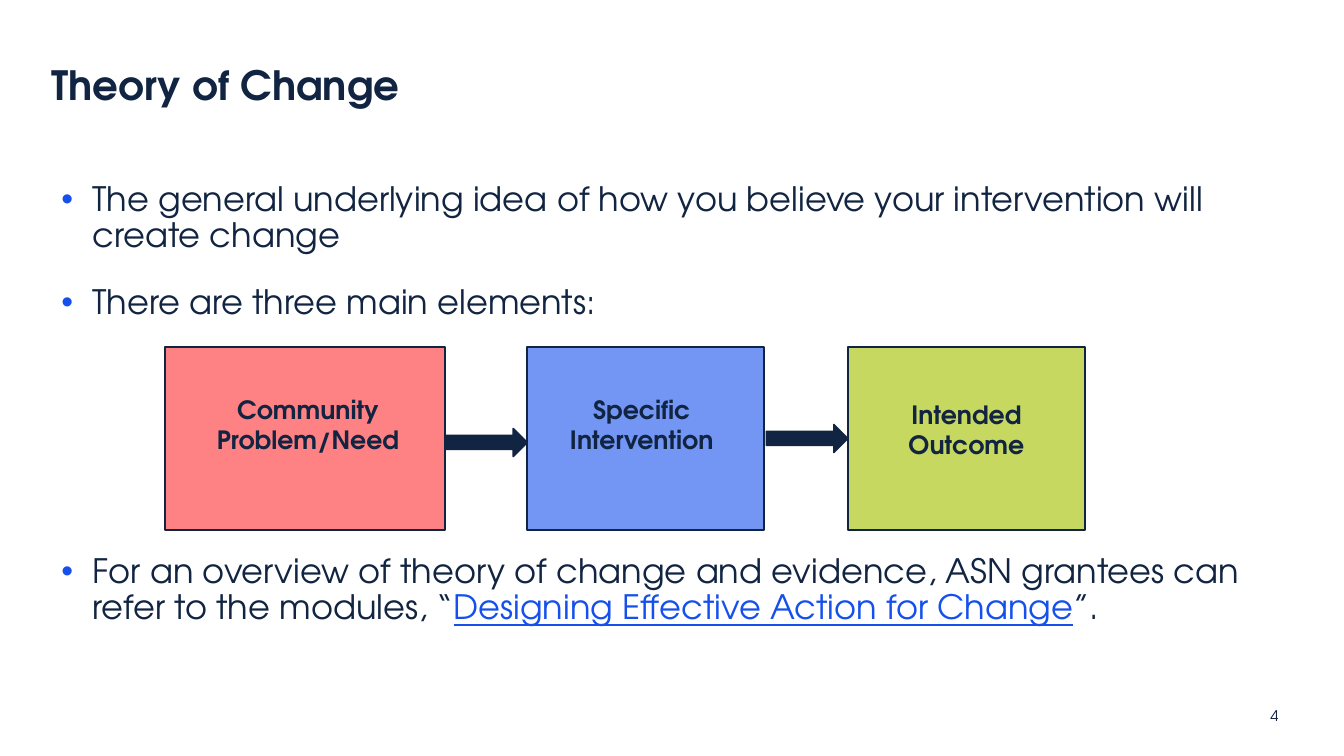
from lxml import etree
from pptx import Presentation
from pptx.dml.color import RGBColor
from pptx.enum import shapes, text
from pptx.oxml import ns
from pptx.util import Inches, Pt

FONT = "TeX Gyre Adventor"
NAVY = RGBColor(0x11, 0x24, 0x41)
BLUE = RGBColor(0x15, 0x50, 0xED)
CORAL = RGBColor(0xFE, 0x82, 0x84)
PERIWINKLE = RGBColor(0x73, 0x96, 0xF4)
LIME = RGBColor(0xC7, 0xD8, 0x61)

DIAGRAM_GAP = 154  # points left free for the diagram between bullets


def add_text(para, words, size=24, color=NAVY, bold=False, underline=False):
    span = para.add_run()
    span.text = words
    font = span.font
    font.name, font.size, font.bold = FONT, Pt(size), bold
    font.underline = underline
    font.color.rgb = color


def add_bullet(para):
    props = para._p.get_or_add_pPr()
    props.set("marL", str(Inches(0.31)))
    props.set("indent", str(-Inches(0.31)))
    color = etree.SubElement(props, ns.qn("a:buClr"))
    etree.SubElement(color, ns.qn("a:srgbClr"), val=str(BLUE))
    etree.SubElement(props, ns.qn("a:buFont"), typeface="Arial")
    etree.SubElement(props, ns.qn("a:buChar"), char="•")


class SlideBuilder:
    """Holds the page and draws its elements in one style."""

    def __init__(self, page):
        self.page = page

    def frame(self, box, anchor=text.MSO_ANCHOR.TOP, inset=True):
        frame = box.text_frame
        frame.word_wrap = True
        frame.auto_size = text.MSO_AUTO_SIZE.NONE
        frame.vertical_anchor = anchor
        if not inset:
            frame.margin_left = frame.margin_right = 0
            frame.margin_top = frame.margin_bottom = 0
        return frame

    def title(self, words, left, top, width, height):
        box = self.page.shapes.title
        box.left, box.top = Inches(left), Inches(top)
        box.width, box.height = Inches(width), Inches(height)
        para = self.frame(box, text.MSO_ANCHOR.BOTTOM, inset=False).paragraphs[0]
        para.alignment = text.PP_ALIGN.LEFT
        para.line_spacing = 0.9
        add_text(para, words, size=28.8, bold=True)

    def text_box(self, left, top, width, height, **layout):
        box = self.page.shapes.add_textbox(
            Inches(left), Inches(top), Inches(width), Inches(height))
        return self.frame(box, **layout)

    def bullets(self, items, left, top, width, height):
        """Draw items given as (space before, [(words, format), ...])."""
        frame = self.text_box(left, top, width, height)
        for index, (space, spans) in enumerate(items):
            para = frame.add_paragraph() if index else frame.paragraphs[0]
            para.line_spacing = 0.9
            para.space_before, para.space_after = Pt(space), Pt(12)
            add_bullet(para)
            for words, style in spans:
                add_text(para, words, **style)

    def label(self, words, left, top):
        para = self.text_box(left, top, 2.11, 0.71).paragraphs[0]
        para.alignment = text.PP_ALIGN.CENTER
        add_text(para, words, size=18, bold=True)

    def shape(self, kind, left, top, width, height, fill, line_width):
        shape = self.page.shapes.add_shape(
            kind, Inches(left), Inches(top), Inches(width), Inches(height))
        shape.shadow.inherit = False
        shape.fill.solid()
        shape.fill.fore_color.rgb = fill
        shape.line.color.rgb = NAVY
        shape.line.width = Pt(line_width)

    def page_number(self, number):
        frame = self.text_box(12.6, 7.02, 0.32, 0.15,
                              anchor=text.MSO_ANCHOR.MIDDLE, inset=False)
        add_text(frame.paragraphs[0], number, size=10.5)


def main():
    deck = Presentation()
    deck.slide_width, deck.slide_height = Inches(13.33), Inches(7.5)
    builder = SlideBuilder(deck.slides.add_slide(deck.slide_layouts[5]))

    builder.title("Theory of Change", 0.51, 0.62, 6.65, 0.46)
    builder.bullets([
        (0, [("The general underlying idea of how you believe your "
              "intervention will create change", {})]),
        (10, [("There are three main elements:", {})]),
        (DIAGRAM_GAP, [
            ("For an overview of theory of change and evidence, ASN grantees "
             "can refer to the modules, “", {}),
            ("Designing Effective Action for Change",
             {"color": BLUE, "underline": True}),
            ("”.", {})]),
    ], 0.51, 1.76, 12.2, 3.5)
    builder.page_number("4")

    elements = [
        ("Community Problem/Need", CORAL, 1.64, 2.77, 2, 3.86),
        ("Specific Intervention", PERIWINKLE, 5.23, 2.35, 5.31, 3.86),
        ("Intended Outcome", LIME, 8.41, 2.35, 8.53, 3.91),
    ]
    for words, fill, left, width, label_left, label_top in elements:
        builder.shape(shapes.MSO_SHAPE.RECTANGLE, left, 3.44, width, 1.82, fill, 1.5)
        builder.label(words, label_left, label_top)
    for left, top in [(4.42, 4.25), (7.6, 4.21)]:
        builder.shape(shapes.MSO_SHAPE.RIGHT_ARROW, left, top, 0.81, 0.28, NAVY, 1)

    deck.save("out.pptx")


if __name__ == "__main__":
    main()
